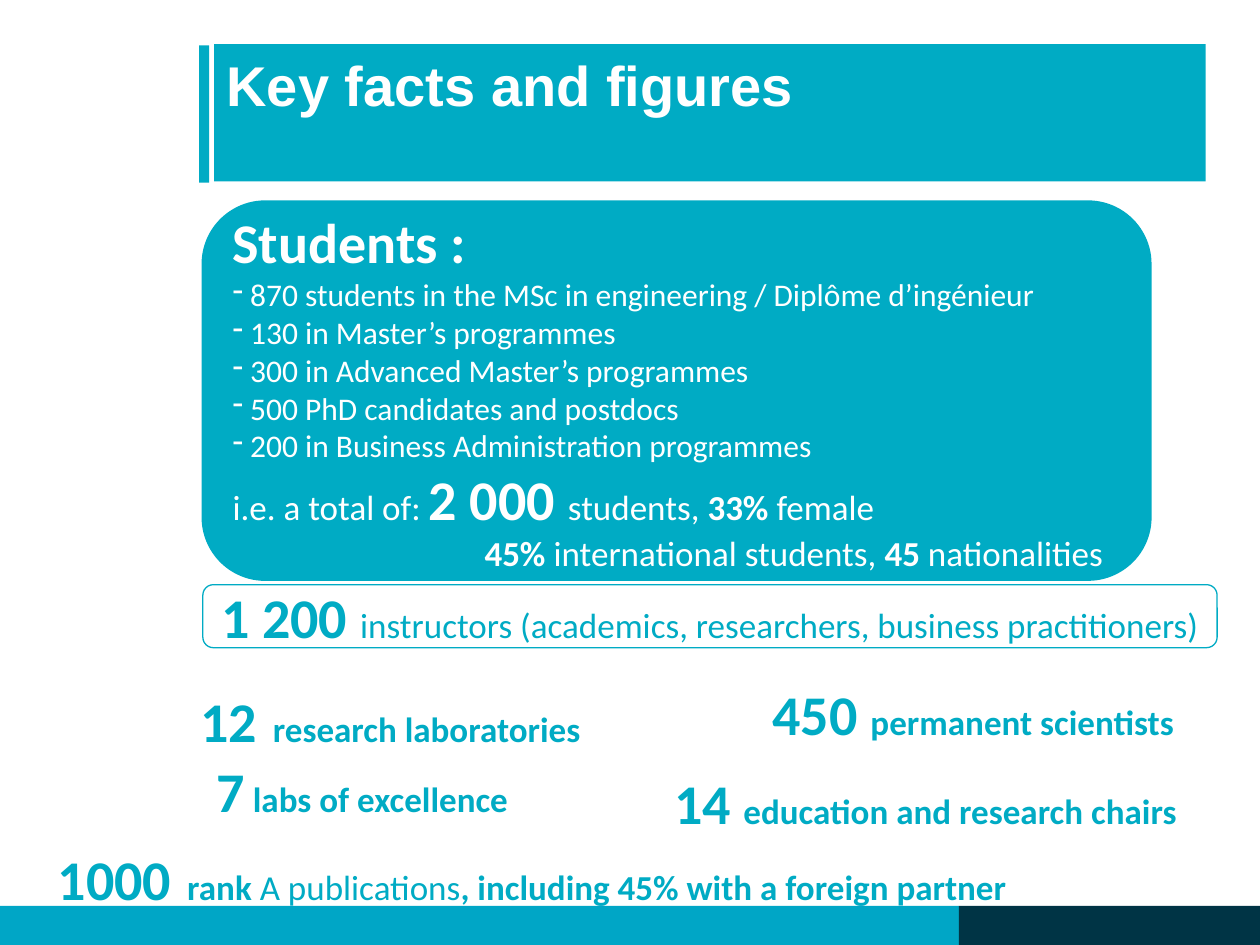
"""Build the key facts and figures slide."""
import pptx
import pptx.dml.color
import pptx.enum.shapes
import pptx.enum.text
import pptx.oxml
import pptx.oxml.ns
import pptx.util

INK = {"teal": "00ABC4", "blue": "00A6C6", "navy": "003445", "white": "FFFFFF"}
RECT = pptx.enum.shapes.MSO_SHAPE.RECTANGLE
ROUND = pptx.enum.shapes.MSO_SHAPE.ROUNDED_RECTANGLE
LEFT, MID = pptx.enum.text.PP_ALIGN.LEFT, pptx.enum.text.PP_ALIGN.CENTER
TOP = pptx.enum.text.MSO_ANCHOR.TOP
HALF = pptx.enum.text.MSO_ANCHOR.MIDDLE

BIG = {"size": 32, "bold": True}
GAP = {"size": 40, "bold": True}
BOLD = {"size": 20, "bold": True}
BODY = {"size": 20, "bold": False}
ITEM = {"size": 18, "bold": False}

GROUPS = [
    "870 students in the MSc in engineering / Diplôme d’ingénieur",
    "130 in Master’s programmes",
    "300 in Advanced Master’s programmes",
    "500 PhD candidates and postdocs",
    "200 in Business Administration programmes",
]
STUDENTS = (
    [{"runs": [("Students :", BIG)]}]
    + [{"runs": [(text, ITEM)], "left": 0.14, "dash": True} for text in GROUPS]
    + [
        {"runs": [("i.e. a total of: ", BODY), ("2 000 ", BIG), ("students, ", BODY),
                  ("33% ", BOLD), ("female", BODY)]},
        {"runs": [("45% ", BOLD), ("international students, ", BODY),
                  ("45", BOLD), (" nationalities", BODY)], "left": 2},
    ]
)
STAFF = [{"runs": [("1 200 ", BIG), (
    "instructors (academics, researchers, business practitioners)", BODY)]}]
TITLE = [{"runs": [("Key facts and figures", BIG)]}]
LABS = [
    {"runs": [("12", BIG), (" ", GAP), ("research laboratories", BOLD)]},
    {"runs": [("7", BIG), (" labs of excellence", BOLD)], "left": 0.13},
]
PAPERS = [{"runs": [("1000", BIG), (" ", GAP), ("rank ", BOLD), ("A publications", BODY),
                    (", including 45% with a foreign partner", BOLD)]}]
PEOPLE = [{"runs": [("450 ", BIG), ("permanent scientists", BOLD)]}]
CHAIRS = [{"runs": [("14 ", BIG), ("education and research chairs", BOLD)]}]

SHAPES = [
    {"at": (16, 21.2, 75.4, 40.27), "kind": ROUND, "fill": "teal", "text": STUDENTS,
     "ink": "white", "anchor": HALF},
    {"at": (16.1, 61.87, 80.5, 6.67), "kind": ROUND, "line": "teal", "text": STAFF,
     "anchor": HALF, "align": MID, "wrap": False},
    {"at": (17, 4.67, 78.7, 14.53), "kind": RECT, "fill": "teal", "text": TITLE,
     "ink": "white", "font": "Arial"},
    {"at": (60.1, 71.2, 34.3, 13.07), "text": PEOPLE, "align": MID, "wrap": False},
    {"at": (14.9, 70.53, 38.5, 22), "text": LABS},
    {"at": (3.6, 87.2, 92, 10.27), "text": PAPERS},
    {"at": (0, 95.87, 76.1, 4.13), "kind": RECT, "fill": "blue"},
    {"at": (76.1, 95.87, 23.9, 4.13), "kind": RECT, "fill": "navy"},
    {"at": (15.8, 4.8, 0.8, 14.53), "kind": RECT, "fill": "teal"},
    {"at": (52.3, 80.67, 42.3, 8.53), "text": CHAIRS, "align": MID, "wrap": False},
]


def tint(name):
    return pptx.dml.color.RGBColor.from_string(INK[name])


def paint(shape, part):
    shape.shadow.inherit = False
    if part["kind"] == ROUND:
        shape.adjustments[0] = 0.167
    for side, key in ((shape.fill, "fill"), (shape.line.fill, "line")):
        if key in part:
            side.solid()
            side.fore_color.rgb = tint(part[key])
        else:
            side.background()
    if "line" in part:
        shape.line.width = pptx.util.Pt(0.75)


def indent(para, left, dash):
    props = para._p.get_or_add_pPr()
    room = pptx.util.Inches(left)
    props.set("marL", str(room))
    props.set("indent", str(-room if dash else 0))
    if dash:
        mark = pptx.oxml.parse_xml(
            f'<a:buChar {pptx.oxml.ns.nsdecls("a")} char="-"/>')
        props.append(mark)


def write(frame, part):
    style = {"word_wrap": part.get("wrap", True),
             "vertical_anchor": part.get("anchor", TOP)}
    for name, value in style.items():
        setattr(frame, name, value)
    for row, line in enumerate(part["text"]):
        para = frame.add_paragraph() if row else frame.paragraphs[0]
        para.alignment = part.get("align", LEFT)
        if "left" in line:
            indent(para, line["left"], line.get("dash", False))
        for text, form in line["runs"]:
            run = para.add_run()
            run.text = text
            look = {**form, "size": pptx.util.Pt(form["size"]),
                    "name": part.get("font", "Calibri")}
            for name, value in look.items():
                setattr(run.font, name, value)
            run.font.color.rgb = tint(part.get("ink", "teal"))


def main():
    deck = pptx.Presentation()
    deck.slide_width = pptx.util.Inches(10)
    deck.slide_height = pptx.util.Inches(7.5)
    size = (deck.slide_width, deck.slide_height) * 2
    slide = deck.slides.add_slide(deck.slide_layouts[6])
    for part in SHAPES:
        box = [round(full * share / 100) for full, share in zip(size, part["at"])]
        if "kind" in part:
            shape = slide.shapes.add_shape(part["kind"], *box)
            paint(shape, part)
        else:
            shape = slide.shapes.add_textbox(*box)
        if "text" in part:
            write(shape.text_frame, part)
    deck.save("out.pptx")


if __name__ == "__main__":
    main()
